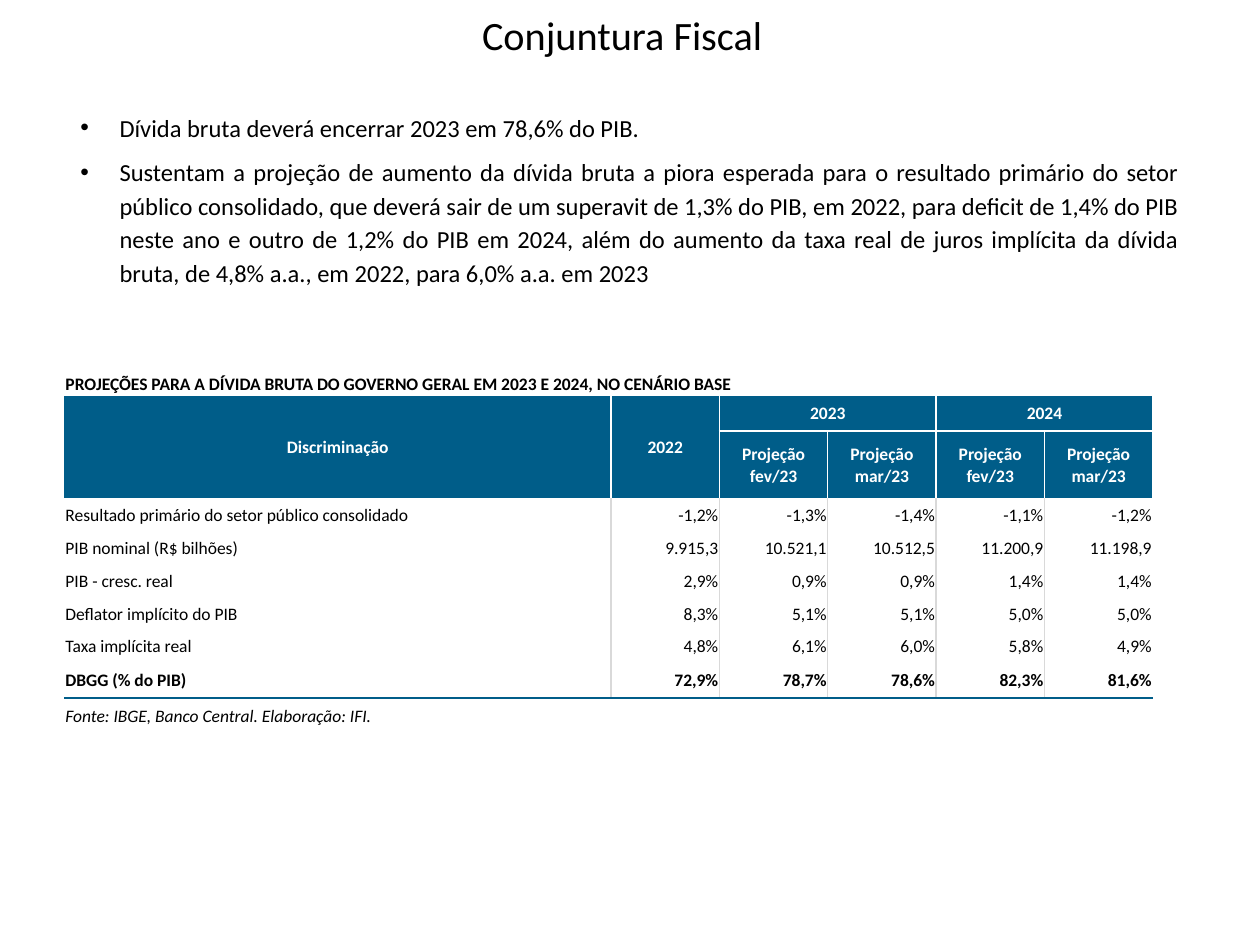
from dataclasses import dataclass
from typing import Optional

from lxml import etree
from pptx import Presentation
from pptx.dml.color import RGBColor
from pptx.enum.text import MSO_ANCHOR, MSO_AUTO_SIZE, PP_ALIGN
from pptx.oxml.ns import qn
from pptx.util import Inches, Pt

LEFT, CENTER, RIGHT, JUSTIFY = PP_ALIGN.LEFT, PP_ALIGN.CENTER, PP_ALIGN.RIGHT, PP_ALIGN.JUSTIFY
MIDDLE, BOTTOM = MSO_ANCHOR.MIDDLE, MSO_ANCHOR.BOTTOM
TITLE_ONLY = 5
W, H = Inches(10), Inches(7.5)
FONT = "Calibri"
NO_STYLE = "{2D5ABB26-0587-4C30-8999-92F81FD0307C}"
COLORS = {"text": "000000", "white": "FFFFFF", "blue": "005D89", "gray": "D9D9D9"}

BULLETS = [
    "Dívida bruta deverá encerrar 2023 em 78,6% do PIB.",
    "Sustentam a projeção de aumento da dívida bruta a piora esperada para o resultado "
    "primário do setor público consolidado, que deverá sair de um superavit de 1,3% do PIB, "
    "em 2022, para deficit de 1,4% do PIB neste ano e outro de 1,2% do PIB em 2024, além do "
    "aumento da taxa real de juros implícita da dívida bruta, de 4,8% a.a., em 2022, para "
    "6,0% a.a. em 2023",
]
CAPTION = "PROJEÇÕES PARA A DÍVIDA BRUTA DO GOVERNO GERAL EM 2023 E 2024, NO CENÁRIO BASE"
SOURCE = "Fonte: IBGE, Banco Central. Elaboração: IFI."
PROJECTIONS = ["Projeção fev/23", "Projeção mar/23"]
DATA = [
    ["Resultado primário do setor público consolidado", "-1,2%", "-1,3%", "-1,4%", "-1,1%", "-1,2%"],
    ["PIB nominal (R$ bilhões)", "9.915,3", "10.521,1", "10.512,5", "11.200,9", "11.198,9"],
    ["PIB - cresc. real", "2,9%", "0,9%", "0,9%", "1,4%", "1,4%"],
    ["Deflator implícito do PIB", "8,3%", "5,1%", "5,1%", "5,0%", "5,0%"],
    ["Taxa implícita real", "4,8%", "6,1%", "6,0%", "5,8%", "4,9%"],
    ["DBGG (% do PIB)", "72,9%", "78,7%", "78,6%", "82,3%", "81,6%"],
]
COL_WIDTHS = [4.34] + [0.86] * 5
ROW_HEIGHTS = [0.28, 0.28, 0.54] + [0.26] * 5 + [0.28] * 2
FIRST_DATA = 3
SOURCE_ROW = len(ROW_HEIGHTS) - 1
GROUP_STARTS = (1, 2, 4)


@dataclass
class HeaderCell:
    row: int
    col: int
    text: str
    rows: int = 1
    cols: int = 1


HEADERS = [
    HeaderCell(1, 0, "Discriminação", rows=2),
    HeaderCell(1, 1, "2022", rows=2),
    HeaderCell(1, 2, "2023", cols=2),
    HeaderCell(1, 4, "2024", cols=2),
] + [HeaderCell(2, 2 + i, text) for i, text in enumerate(PROJECTIONS * 2)]


def rgb(name: str) -> RGBColor:
    return RGBColor.from_string(COLORS[name])


def add_run(p, text: str, size: float, color: str = "text", bold: bool = False,
            italic: bool = False) -> None:
    r = p.add_run()
    r.text = text
    r.font.name, r.font.size = FONT, Pt(size)
    r.font.bold, r.font.italic = bold, italic
    r.font.color.rgb = rgb(color)


def add_border(cell, side: str, color: str, width: float = 1) -> None:
    ln = etree.SubElement(cell._tc.get_or_add_tcPr(), qn(f"a:ln{side}"), w=str(Pt(width)))
    fill = etree.SubElement(ln, qn("a:solidFill"))
    etree.SubElement(fill, qn("a:srgbClr"), val=COLORS[color])


def set_cell(cell, text: str = "", align: PP_ALIGN = LEFT, anchor: MSO_ANCHOR = MIDDLE,
             fill: str = "white", borders: Optional[dict] = None, **style) -> None:
    cell.margin_left = cell.margin_right = cell.margin_top = Inches(0.01)
    cell.margin_bottom = 0
    cell.vertical_anchor = anchor
    for side in "LRTB":
        if borders and side in borders:
            add_border(cell, side, *borders[side])
    cell.fill.solid()
    cell.fill.fore_color.rgb = rgb(fill)
    p = cell.text_frame.paragraphs[0]
    p.alignment = align
    if text:
        add_run(p, text, 10, **style)
    else:
        etree.SubElement(p._p, qn("a:endParaRPr"), sz="1000")


def add_title(s) -> None:
    sp = s.shapes.title
    sp.left, sp.top, sp.width, sp.height = int(W * 0.296), 0, int(W * 0.396), Inches(0.59)
    tf = sp.text_frame
    tf.vertical_anchor = MIDDLE
    p = tf.paragraphs[0]
    p.alignment, p.line_spacing = CENTER, 0.9
    add_run(p, "Conjuntura Fiscal", 23)


def add_bullets(s) -> None:
    sp = s.shapes.add_textbox(int(W * 0.054), int(H * 0.108), int(W * 0.892), Inches(1.54))
    tf = sp.text_frame
    tf.word_wrap = True
    tf.auto_size = MSO_AUTO_SIZE.SHAPE_TO_FIT_TEXT
    for i, text in enumerate(BULLETS):
        p = tf.add_paragraph() if i else tf.paragraphs[0]
        p.alignment, p.line_spacing, p.space_after = JUSTIFY, 1.15, Pt(6)
        pPr = p._p.get_or_add_pPr()
        pPr.set("marL", str(Inches(0.31)))
        pPr.set("indent", str(-Inches(0.31)))
        etree.SubElement(pPr, qn("a:buFont"), typeface="Arial")
        etree.SubElement(pPr, qn("a:buChar"), char="•")
        add_run(p, text, 14)


def add_projection_table(s) -> None:
    frame = s.shapes.add_table(len(ROW_HEIGHTS), len(COL_WIDTHS), int(W * 0.051), Inches(2.86),
                               Inches(sum(COL_WIDTHS)), Inches(sum(ROW_HEIGHTS)))
    table = frame.table
    table.first_row = table.horz_banding = False
    table._tbl.tblPr[0].text = NO_STYLE
    for col, width in zip(table.columns, COL_WIDTHS):
        col.width = Inches(width)
    for row, height in zip(table.rows, ROW_HEIGHTS):
        row.height = Inches(height)

    table.cell(0, 0).merge(table.cell(0, len(COL_WIDTHS) - 1))
    set_cell(table.cell(0, 0), CAPTION, anchor=BOTTOM, bold=True)

    for h in HEADERS:
        cell = table.cell(h.row, h.col)
        if h.rows * h.cols > 1:
            cell.merge(table.cell(h.row + h.rows - 1, h.col + h.cols - 1))
        sides = "LRTB" if h.col else "RTB"
        set_cell(cell, h.text, CENTER, fill="blue", color="white", bold=True,
                 borders={side: ("white",) for side in sides})

    for i, values in enumerate(DATA):
        total = i == len(DATA) - 1
        for c, value in enumerate(values):
            borders = {}
            if c in GROUP_STARTS:
                borders["L"] = ("gray",)
            if c + 1 in GROUP_STARTS:
                borders["R"] = ("gray",)
            if total:
                borders["B"] = ("blue", 1.5)
            set_cell(table.cell(FIRST_DATA + i, c), value, RIGHT if c else LEFT,
                     borders=borders, bold=total)

    for c in range(len(COL_WIDTHS)):
        set_cell(table.cell(SOURCE_ROW, c), "" if c else SOURCE, JUSTIFY,
                 borders={"T": ("blue", 1.5)}, italic=True)


def main() -> None:
    prs = Presentation()
    prs.slide_width, prs.slide_height = W, H
    s = prs.slides.add_slide(prs.slide_layouts[TITLE_ONLY])
    add_title(s)
    add_bullets(s)
    add_projection_table(s)
    prs.save("out.pptx")


if __name__ == "__main__":
    main()
